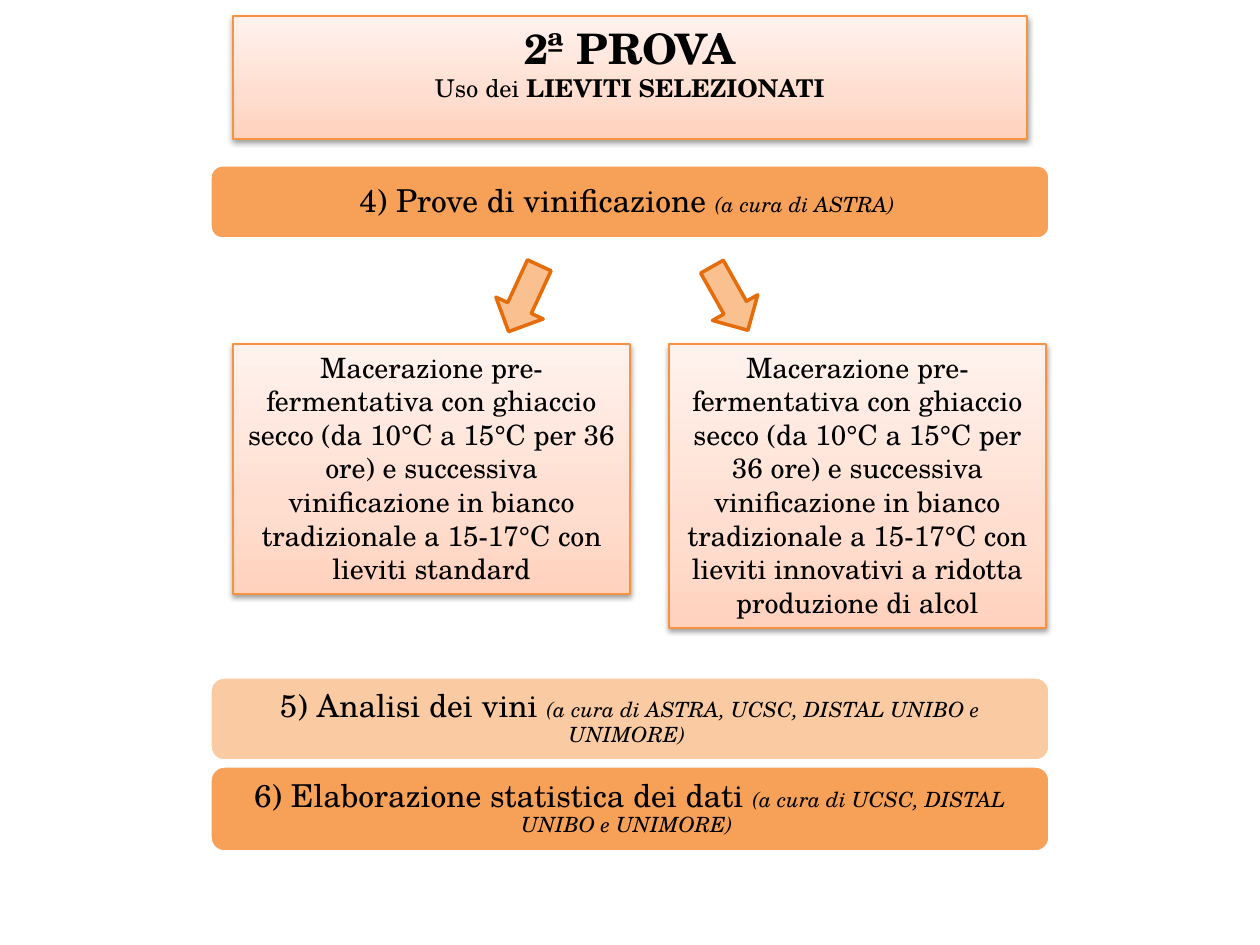
from lxml import etree
from pptx import Presentation
from pptx import util as u
from pptx.dml.color import RGBColor
from pptx.enum import shapes, text
from pptx.oxml import parse_xml
from pptx.oxml.ns import nsdecls, qn

PX = 914400 / 126
FONT = "TeX Gyre Schola"
COLORS = {
    "text": "000000",
    "bar": "F79646",
    "bar_line": "FFFFFF",
    "arrow": "FAC090",
    "arrow_line": "E46C0A",
    "panel_line": "F69240",
    "panel_bottom": "FFD2BD",
    "panel_middle": "FFDED0",
    "panel_top": "FFF2ED",
}
PANEL_STOPS = [(0, "panel_bottom"), (35, "panel_middle"), (100, "panel_top")]

# Run formats
HEADING = {"size": u.Pt(24), "bold": True}
SUBTITLE = {"size": u.Pt(14)}
SUBTITLE_BOLD = {"size": u.Pt(14), "bold": True}
BODY = {"size": u.Pt(16)}
STEP = {"size": u.Pt(18)}
CREDIT = {"size": u.Pt(12), "italic": True}


def px(value):
    return u.Emu(round(value * PX))


def color(name):
    return RGBColor.from_string(COLORS[name])


def add_shape(slide, kind, box, line, width):
    shape = slide.shapes.add_shape(kind, *map(px, box))
    shape.shadow.inherit = False
    shape.line.color.rgb = color(line)
    shape.line.width = u.Pt(width)
    return shape


def fill_solid(shape, name, opacity=100):
    shape.fill.solid()
    shape.fill.fore_color.rgb = color(name)
    if opacity < 100:
        srgb = shape.element.spPr.find(qn("a:solidFill")).find(qn("a:srgbClr"))
        etree.SubElement(srgb, qn("a:alpha"), val=str(opacity * 1000))


def write(shape, paragraphs, **frame_format):
    frame = shape.text_frame
    frame.word_wrap = True
    for key, value in frame_format.items():
        setattr(frame, key, value)
    for index, runs in enumerate(paragraphs):
        paragraph = frame.add_paragraph() if index else frame.paragraphs[0]
        paragraph.alignment = text.PP_ALIGN.CENTER
        for words, run_format in runs:
            run = paragraph.add_run()
            run.text = words
            run.font.name = FONT
            run.font.color.rgb = color("text")
            for key, value in run_format.items():
                setattr(run.font, key, value)


def add_panel(slide, box, paragraphs):
    """Rectangle with a vertical gradient and a soft shadow below."""
    panel = add_shape(slide, shapes.MSO_SHAPE.RECTANGLE, box, "panel_line", 0.75)
    stops = "".join(
        f'<a:gs pos="{position * 1000}"><a:srgbClr val="{COLORS[name]}"/></a:gs>'
        for position, name in PANEL_STOPS)
    gradient = parse_xml(
        f'<a:gradFill {nsdecls("a")} rotWithShape="1"><a:gsLst>{stops}</a:gsLst>'
        '<a:lin ang="16200000" scaled="0"/></a:gradFill>')
    properties = panel.element.spPr
    properties.find(qn("a:prstGeom")).addnext(gradient)
    properties.find(qn("a:effectLst")).append(parse_xml(
        f'<a:outerShdw {nsdecls("a")} blurRad="40000" dist="20000" dir="5400000" '
        'rotWithShape="0"><a:srgbClr val="000000"><a:alpha val="38000"/>'
        '</a:srgbClr></a:outerShdw>'))
    write(panel, paragraphs, vertical_anchor=text.MSO_ANCHOR.TOP)


def add_step(slide, top, height, opacity, title, credit):
    bar = add_shape(slide, shapes.MSO_SHAPE.ROUNDED_RECTANGLE,
                    (210, top, 840, height), "bar_line", 2)
    fill_solid(bar, "bar", opacity)
    inset = px(9)
    write(bar, [[(title, STEP), (credit, CREDIT)]],
          vertical_anchor=text.MSO_ANCHOR.MIDDLE, margin_left=inset,
          margin_right=inset, margin_top=inset, margin_bottom=inset)
    bar.text_frame.paragraphs[0].line_spacing = 0.9


def add_arrow(slide, left, rotation):
    arrow = add_shape(slide, shapes.MSO_SHAPE.DOWN_ARROW,
                      (left, 262, 52, 73), "arrow_line", 2)
    fill_solid(arrow, "arrow")
    arrow.rotation = rotation


def main():
    prs = Presentation()
    prs.slide_width, prs.slide_height = px(1260), px(945)
    slide = prs.slides.add_slide(prs.slide_layouts[6])

    # Title
    add_panel(slide, (233, 16, 794, 123), [
        [("2ª PROVA", HEADING)],
        [("Uso dei ", SUBTITLE), ("LIEVITI SELEZIONATI", SUBTITLE_BOLD)],
    ])

    # Numbered steps
    add_step(slide, 165, 74, 90, "4) Prove di vinificazione ", "(a cura di ASTRA) ")
    add_step(slide, 766, 86, 90, "6) Elaborazione statistica dei dati ",
             "(a cura di UCSC, DISTAL UNIBO e UNIMORE) ")
    add_step(slide, 677, 84, 50, "5) Analisi dei vini ",
             "(a cura di ASTRA, UCSC, DISTAL UNIBO e UNIMORE) ")

    # Arrows to the two trials
    add_arrow(slide, 498, 24.8)
    add_arrow(slide, 704, 330.5)

    # Trials, which differ only in the yeast
    process = ("Macerazione pre-fermentativa con ghiaccio secco (da 10°C a 15°C "
               "per 36 ore) e successiva vinificazione in bianco tradizionale "
               "a 15-17°C con lieviti ")
    for box, yeast in [
        ((233, 344, 397, 250), "standard"),
        ((669, 344, 377, 284), "innovativi a ridotta produzione di alcol"),
    ]:
        add_panel(slide, box, [[(process + yeast, BODY)]])

    prs.save("out.pptx")


if __name__ == "__main__":
    main()
